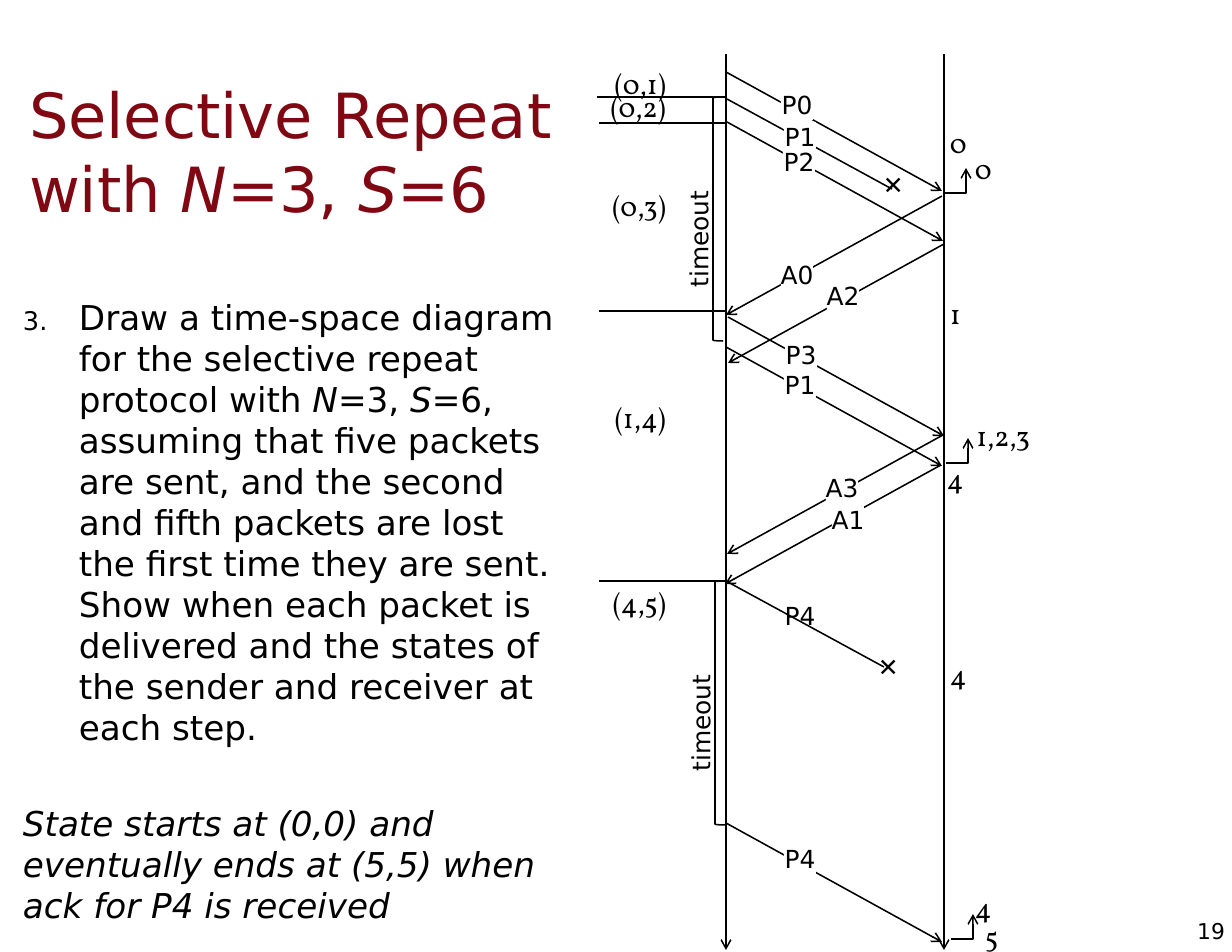
import pptx
import pptx.util
import pptx.dml.color
import pptx.enum.shapes
import pptx.enum.text
from lxml import etree
from pptx.oxml.ns import qn

SHAPE = pptx.enum.shapes.MSO_SHAPE
ALIGN = pptx.enum.text.PP_ALIGN
ANCHOR = pptx.enum.text.MSO_ANCHOR
SANS, SERIF, SYMBOL = "DejaVu Sans", "Vollkorn", "Arial"
BLACK, WHITE, MAROON = "000000", "FFFFFF", "7F0813"
SENDER, RECEIVER = 726, 943
RUN, RISE = 216, 119  # travel of a message that arrives

# Messages that arrive: start x, start y, direction
MESSAGES = [
    (726, 72, 1), (942, 196, -1), (727, 122, 1), (726, 347, 1), (944, 244, -1),
    (941, 465, -1), (726, 823, 1), (728, 317, 1), (943, 435, -1),
]
# Lost messages: start x, start y, run, rise, then the centre of the cross
LOST = [(727, 99, 165, 90, 893, 185), (726, 581, 158, 86, 888, 667)]
LABELS = [
    ("P0", 781, 90), ("P1", 784, 122), ("P2", 783, 147), ("A0", 781, 260),
    ("A2", 827, 281), ("P3", 785, 340), ("P1", 784, 370), ("A3", 826, 473),
    ("A1", 832, 505), ("P4", 784, 844),
]
SENDER_STATES = [("(0,1)", 60), ("(0,2)", 84), ("(0,3)", 183),
                 ("(1,4)", 395), ("(4,5)", 579)]
RECEIVER_STATES = [("0", 939, 120), ("1", 939, 290), ("4", 936, 456),
                   ("4", 939, 651), ("5", 974, 914)]
DELIVERED = [("0", 964, 146, 31), ("1,2,3", 961, 412, 80), ("4", 964, 884, 31)]


def px(n):
    return pptx.util.Emu(round(n * 914400 / 112))


def color(value):
    return pptx.dml.color.RGBColor.from_string(value)


def add_run(p, text, size, font=SANS, fill=BLACK, italic=False):
    r = p.add_run()
    r.text = text
    r.font.size = pptx.util.Pt(size)
    r.font.name = font
    r.font.italic = italic
    r.font.color.rgb = color(fill)


def set_frame(tf, dx, dy, anchor, wrap=True):
    tf.auto_size = pptx.enum.text.MSO_AUTO_SIZE.NONE
    tf.word_wrap = wrap
    tf.vertical_anchor = anchor
    tf.margin_left = tf.margin_right = px(dx)
    tf.margin_top = tf.margin_bottom = px(dy)


def place(sp, x, y, w, h):
    sp.left, sp.top, sp.width, sp.height = px(x), px(y), px(w), px(h)


def style_line(sp, arrow=False):
    sp.line.color.rgb = color(BLACK)
    sp.line.width = pptx.util.Pt(1)
    if arrow:
        ln = sp.line._get_or_add_ln()
        etree.SubElement(ln, qn("a:tailEnd"), type="arrow")


def add_line(s, x1, y1, x2, y2, arrow=False):
    sp = s.shapes.add_connector(pptx.enum.shapes.MSO_CONNECTOR.STRAIGHT,
                                px(x1), px(y1), px(x2), px(y2))
    style_line(sp, arrow)
    etree.SubElement(sp._element.spPr, qn("a:effectLst"))


def add_label(s, text, x, y):
    sp = s.shapes.add_shape(SHAPE.RECTANGLE, px(x), px(y), px(32), px(30))
    sp.shadow.inherit = False
    sp.fill.solid()
    sp.fill.fore_color.rgb = color(WHITE)
    sp.line.fill.background()
    set_frame(sp.text_frame, 0, 0, ANCHOR.MIDDLE, wrap=False)
    p = sp.text_frame.paragraphs[0]
    p.alignment = ALIGN.CENTER
    add_run(p, text, 16)


def add_text(s, text, x, y, w, h, size=16, font=SANS, align=ALIGN.CENTER):
    sp = s.shapes.add_textbox(px(x), px(y), px(w), px(h))
    set_frame(sp.text_frame, 0, 0, ANCHOR.MIDDLE)
    p = sp.text_frame.paragraphs[0]
    p.alignment = align
    add_run(p, text, size, font)
    return sp


def add_state(s, text, x, y, w):
    sp = s.shapes.add_textbox(px(x), px(y), px(w), px(45))
    set_frame(sp.text_frame, 11, 6, ANCHOR.TOP)
    p = sp.text_frame.paragraphs[0]
    p.alignment = ALIGN.RIGHT
    add_run(p, text, 18, SERIF)


def add_timeout(s, x, y):
    sp = s.shapes.add_shape(SHAPE.LEFT_BRACKET, px(x), px(y), px(10), px(244))
    sp.shadow.inherit = False
    sp.fill.background()
    style_line(sp)
    add_text(s, "timeout", x - 63, y + 127, 97, 30).rotation = 270


def add_delivery(s, x, y):
    fb = s.shapes.build_freeform(px(x), px(y))
    fb.add_line_segments([(px(x + 22), px(y)), (px(x + 22), px(y - 25))],
                         close=False)
    sp = fb.convert_to_shape()
    sp.shadow.inherit = False
    sp.fill.background()
    style_line(sp, arrow=True)


def fill_title(sp):
    place(sp, 17, 78, 568, 145)
    set_frame(sp.text_frame, 12, 7, ANCHOR.MIDDLE)
    p = sp.text_frame.paragraphs[0]
    p.alignment = ALIGN.LEFT
    for text, italic in [("Selective Repeat with ", False), ("N", True),
                         ("=3, ", False), ("S", True), ("=6", False)]:
        add_run(p, text, 40, fill=MAROON, italic=italic)


def number_paragraph(p, start):
    pPr = p._p.get_or_add_pPr()
    pPr.set("marL", str(px(56)))
    pPr.set("indent", str(px(-56)))
    clr = etree.SubElement(pPr, qn("a:buClr"))
    etree.SubElement(clr, qn("a:srgbClr"), val=BLACK)
    etree.SubElement(pPr, qn("a:buSzPct"), val="75000")
    etree.SubElement(pPr, qn("a:buFont"), typeface=SANS)
    etree.SubElement(pPr, qn("a:buAutoNum"), type="arabicPeriod",
                     startAt=str(start))


def fill_body(sp):
    place(sp, 11, 289, 561, 642)
    tf = sp.text_frame
    set_frame(tf, 12, 7, ANCHOR.TOP)
    p = tf.paragraphs[0]
    p.space_before = pptx.util.Pt(0)
    number_paragraph(p, 3)
    for text, italic in [
            ("Draw a time-space diagram for the selective repeat protocol with ",
             False), ("N", True), ("=3, ", False), ("S", True),
            ("=6, assuming that five packets are sent, and the second and fifth "
             "packets are lost the first time they are sent. Show when each "
             "packet is delivered and the states of the sender and receiver at "
             "each step.", False)]:
        add_run(p, text, 22, italic=italic)
    p = tf.add_paragraph()
    p.space_before = pptx.util.Pt(35)
    pPr = p._p.get_or_add_pPr()
    pPr.set("marL", "0")
    pPr.set("indent", "0")
    etree.SubElement(pPr, qn("a:buNone"))
    add_run(p, "State starts at (0,0) and eventually ends at (5,5) when ack for "
               "P4 is received", 22, italic=True)


def main():
    prs = pptx.Presentation()
    prs.slide_width, prs.slide_height = px(1232), px(952)
    s = prs.slides.add_slide(prs.slide_layouts[1])
    fill_title(s.shapes.title)
    fill_body(s.placeholders[1])
    add_text(s, "19", 1187, 917, 38, 27, 14, align=ALIGN.RIGHT)

    # Time axes
    for x in (SENDER, RECEIVER + 1):
        add_line(s, x, 54, x, 950, arrow=True)

    # Messages; the first P4 label lies under its line
    add_label(s, "P4", 784, 601)
    for x, y, way in MESSAGES:
        add_line(s, x, y, x + way * RUN, y + RISE, arrow=True)
    for x, y, run, rise, cross_x, cross_y in LOST:
        add_line(s, x, y, x + run, y + rise)
        add_text(s, "✕", cross_x - 10, cross_y - 15, 20, 30, font=SYMBOL)
    for text, x, y in LABELS:
        add_label(s, text, x, y)

    # Sender: timeouts, state changes and states
    add_timeout(s, 713, 97)
    add_timeout(s, 715, 581)
    for x, y in [(597, 97), (599, 123), (599, 311), (599, 581)]:
        add_line(s, x + 128, y, x, y)
    for text, y in SENDER_STATES:
        add_state(s, text, 597, y, 80)

    # Receiver: states and deliveries
    for text, x, y in RECEIVER_STATES:
        add_state(s, text, x, y, 31)
    for x, y in [(944, 193), (946, 463), (951, 939)]:
        add_delivery(s, x, y)
    for text, x, y, w in DELIVERED:
        add_state(s, text, x, y, w)

    prs.save("out.pptx")


if __name__ == "__main__":
    main()
